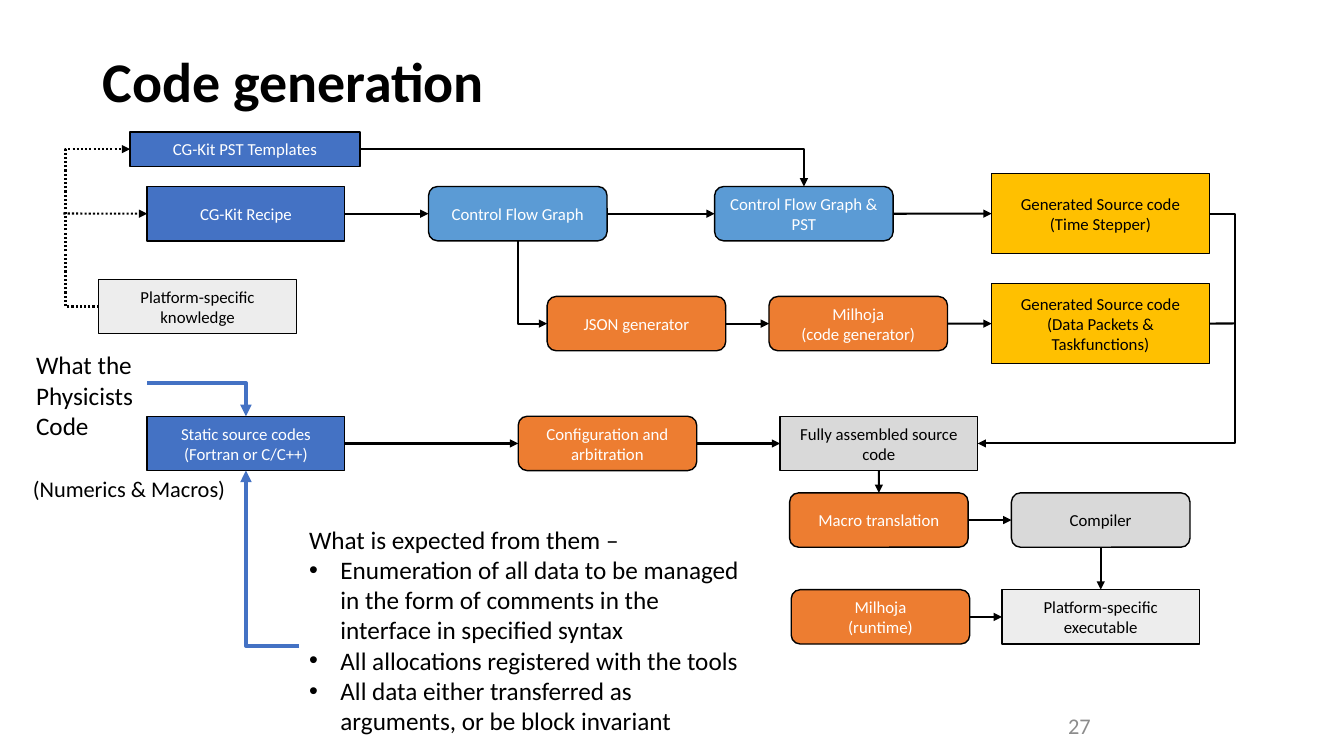
"""Build the slide that shows the code generation flow."""
import pptx
import pptx.dml.color
import pptx.enum.dml
import pptx.enum.shapes
import pptx.enum.text
import pptx.oxml
import pptx.oxml.ns
import pptx.util
from lxml import etree

Cm = pptx.util.Cm
Pt = pptx.util.Pt
qn = pptx.oxml.ns.qn
KIND = pptx.enum.shapes.MSO_SHAPE
WIRE = pptx.enum.shapes.MSO_CONNECTOR
ALIGN = pptx.enum.text.PP_ALIGN
ANCHOR = pptx.enum.text.MSO_ANCHOR
TOP, LEFT, BOTTOM, RIGHT = range(4)
BLACK, WHITE = "000000", "FFFFFF"
BLUE, SKY, ORANGE, GOLD = "4472C4", "5B9BD5", "ED7D31", "FFC000"
GRAY, PALE, DIM = "D9D9D9", "EDEDED", "8C8C8C"
WIDE, SLIM, TALL = (4.98, 1.37), (4.5, 1.37), (5.49, 2.01)
ROWS = (4.7, 7.47, 10.49, 12.42, 14.86)


def tint(code):
    """Turn a hex string into a colour."""
    return pptx.dml.color.RGBColor.from_string(code)


def style(frame, size, color, align, bold=False):
    """Format every paragraph and run of a text frame."""
    for para in frame.paragraphs:
        para.alignment = align
        for run in para.runs:
            run.font.name = "Calibri"
            run.font.size = Pt(size)
            run.font.bold = bold
            run.font.color.rgb = tint(color)


def box(slide, kind, text, spot, size, fill, ink=WHITE):
    """Add one filled step with centred text."""
    shape = slide.shapes.add_shape(kind, *map(Cm, spot + size))
    shape.shadow.inherit = False
    shape.fill.solid()
    shape.fill.fore_color.rgb = tint(fill)
    shape.line.color.rgb = tint(BLACK)
    shape.line.width = Pt(1)
    shape.text_frame.text = text
    shape.text_frame.vertical_anchor = ANCHOR.MIDDLE
    style(shape.text_frame, 12, ink, ALIGN.CENTER)
    return shape


def label(slide, text, area, size, color=BLACK, align=ALIGN.LEFT,
          anchor=ANCHOR.TOP, bold=False):
    """Add a plain text box and return its frame."""
    frame = slide.shapes.add_textbox(*map(Cm, area)).text_frame
    frame.word_wrap = True
    frame.vertical_anchor = anchor
    frame.text = text
    style(frame, size, color, align, bold)
    return frame


def bullet(para):
    """Give a paragraph a hanging bullet."""
    props = para._p.get_or_add_pPr()
    props.set("marL", str(Cm(0.79)))
    props.set("indent", str(-Cm(0.79)))
    etree.SubElement(props, qn("a:buFont"), typeface="Arial")
    etree.SubElement(props, qn("a:buChar"), char="•")


def link(slide, start, stop, kind=WIRE.STRAIGHT, color=BLACK, width=1.5,
         dots=False, tip="tailEnd"):
    """Join two ends, each a (shape, side) pair or an (x, y) point."""
    glued = [hasattr(end[0], "shape_id") for end in (start, stop)]
    spots = [(0, 0) if held else tuple(map(Cm, end))
             for end, held in zip((start, stop), glued)]
    wire = slide.shapes.add_connector(kind, *spots[0], *spots[1])
    if glued[0]:
        wire.begin_connect(*start)
    if glued[1]:
        wire.end_connect(*stop)
    wire.line.color.rgb = tint(color)
    wire.line.width = Pt(width)
    if dots:
        wire.line.dash_style = pptx.enum.dml.MSO_LINE.ROUND_DOT
    props = wire.element.spPr
    if tip:
        etree.SubElement(props.find(qn("a:ln")), qn("a:" + tip), type="triangle")
    etree.SubElement(props, qn("a:effectLst"))
    return wire


def bend(slide, start, stop, **look):
    """Add an elbow with one corner, level first."""
    wire = link(slide, start, stop, WIRE.ELBOW, **look)
    wire.element.spPr.find(qn("a:prstGeom")).set("prst", "bentConnector2")


def loop(slide, start, stop, lane, **look):
    """Add an elbow whose upright part runs at the given lane."""
    wire = link(slide, start, stop, WIRE.ELBOW, **look)
    ratio = (Cm(lane) - wire.begin_x) / (wire.end_x - wire.begin_x)
    geom = wire.element.spPr.find(qn("a:prstGeom"))
    guides = geom.find(qn("a:avLst"))
    if guides is None:
        guides = etree.SubElement(geom, qn("a:avLst"))
    etree.SubElement(guides, qn("a:gd"), name="adj1",
                     fmla=f"val {round(ratio * 100000)}")


def notes(slide):
    """Add the title, the side texts and the page number."""
    title = label(slide, "Code generation", (2.34, 0.28, 29.21, 3.68), 40,
                  anchor=ANCHOR.MIDDLE, bold=True)
    title.paragraphs[0].line_spacing = 0.9
    label(slide, "27", (20.12, 17.78, 7.62, 1.02), 16, DIM, ALIGN.RIGHT,
          ANCHOR.MIDDLE)
    label(slide, "(Numerics & Macros)", (0.58, 11.84, 5.8, 0.94), 16)
    label(slide, "What the\nPhysicists\nCode", (0.66, 8.69, 3.2, 2.57), 18)
    tasks = label(slide, "What is expected from them –\n"
                  "Enumeration of all data to be managed in the form of "
                  "comments in the interface in specified syntax\n"
                  "All allocations registered with the tools\n"
                  "All data either transferred as arguments, or be block "
                  "invariant", (7.54, 13.08, 11.58, 6.4), 18)
    for para in tasks.paragraphs[1:]:
        bullet(para)


def main():
    """Draw the steps, join them and save the deck."""
    deck = pptx.Presentation()
    deck.slide_width, deck.slide_height = Cm(33.87), Cm(19.05)
    slide = deck.slides.add_slide(deck.slide_layouts[6])
    notes(slide)

    rect, soft = KIND.RECTANGLE, KIND.ROUNDED_RECTANGLE
    flow, data, build, macro, run = ROWS
    steps = {
        "forms": (rect, "CG-Kit PST Templates", (3.28, 3.33), (5.79, 0.86), BLUE),
        "plan": (rect, "CG-Kit Recipe", (3.71, flow), WIDE, BLUE),
        "facts": (rect, "Platform-specific knowledge", (2.49, 7.04), WIDE, PALE, BLACK),
        "graph": (soft, "Control Flow Graph", (10.8, flow), SLIM, SKY),
        "tree": (soft, "Control Flow Graph & PST", (18.01, flow), SLIM, SKY),
        "time": (rect, "Generated Source code\n(Time Stepper)", (24.99, 4.38),
                 TALL, GOLD, BLACK),
        "json": (soft, "JSON generator", (13.79, data), SLIM, ORANGE),
        "coder": (soft, "Milhoja\n(code generator)", (19.38, data), SLIM, ORANGE),
        "packs": (rect, "Generated Source code\n(Data Packets & Taskfunctions)",
                  (24.99, 7.15), TALL, GOLD, BLACK),
        "fixed": (rect, "Static source codes (Fortran or C/C++)", (3.71, build),
                  WIDE, BLUE),
        "setup": (soft, "Configuration and arbitration", (13.06, build), SLIM, ORANGE),
        "whole": (rect, "Fully assembled source code", (19.66, build), WIDE,
                  GRAY, BLACK),
        "macro": (soft, "Macro translation", (19.9, macro), SLIM, ORANGE),
        "maker": (soft, "Compiler", (25.49, macro), SLIM, GRAY, BLACK),
        "engine": (soft, "Milhoja\n(runtime)", (19.94, run), SLIM, ORANGE),
        "final": (rect, "Platform-specific executable", (25.25, run), WIDE,
                  PALE, BLACK),
    }
    step = {name: box(slide, *parts) for name, parts in steps.items()}

    chains = ("plan graph tree time", "json coder packs", "fixed setup whole",
              "macro maker", "engine final")
    for chain in chains:
        names = chain.split()
        for left, right in zip(names, names[1:]):
            link(slide, (step[left], RIGHT), (step[right], LEFT))
    for upper, lower in (("whole", "macro"), ("maker", "final")):
        link(slide, (step[upper], BOTTOM), (step[lower], TOP))

    link(slide, (1.6, 5.38), (step["plan"], LEFT), dots=True)
    link(slide, (step["packs"], RIGHT), (31.12, 8.15), tip=None)
    loop(slide, (step["facts"], LEFT), (step["forms"], LEFT), 1.65, dots=True)
    loop(slide, (step["time"], RIGHT), (step["whole"], RIGHT), 31.12)
    bend(slide, (step["forms"], RIGHT), (step["tree"], TOP))
    bend(slide, (step["json"], LEFT), (step["graph"], BOTTOM), tip="headEnd")
    for spot, side in (((3.71, 9.65), TOP), ((7.54, 16.28), BOTTOM)):
        bend(slide, spot, (step["fixed"], side), color=BLUE, width=2.75)
    deck.save("out.pptx")


if __name__ == "__main__":
    main()
